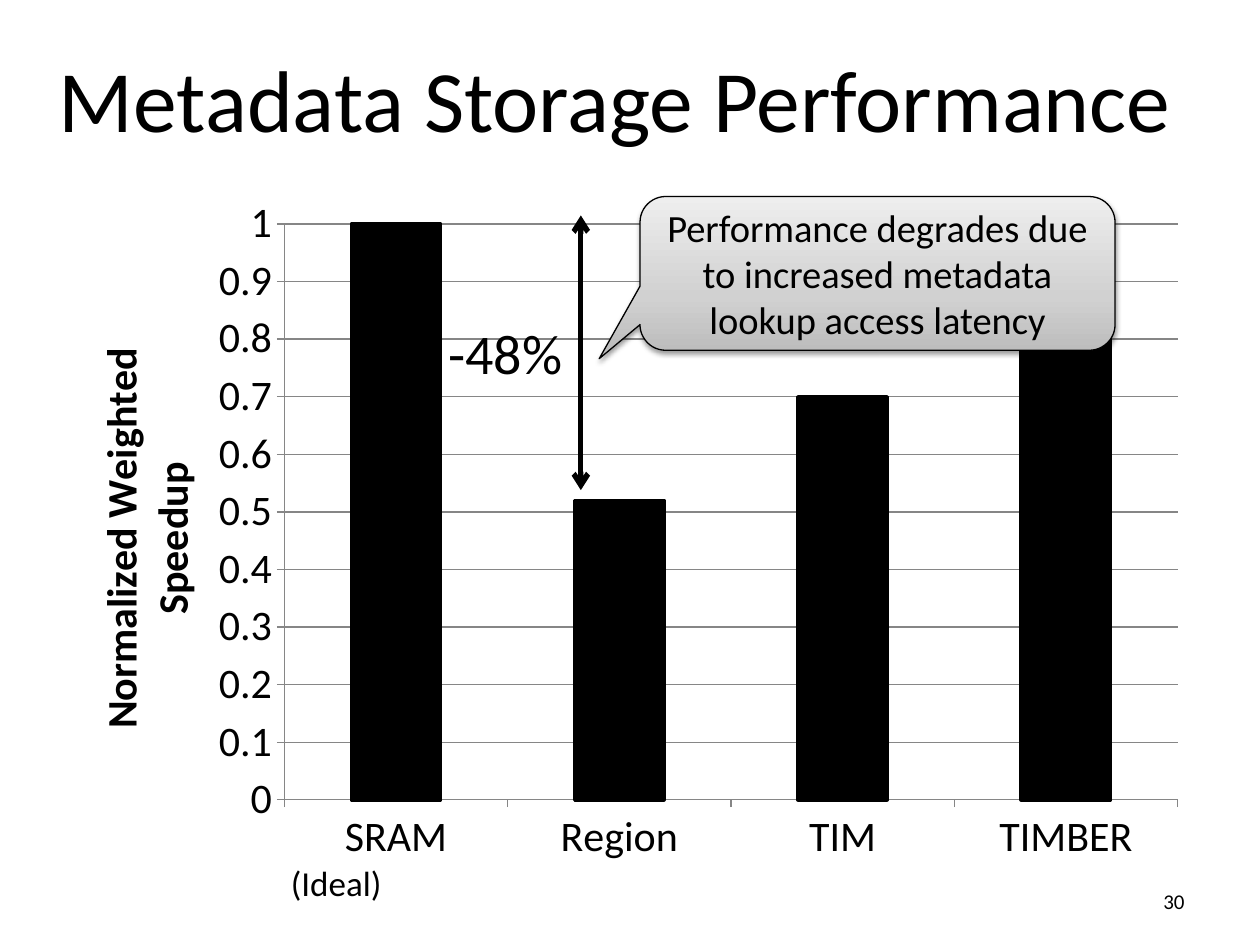
from typing import NamedTuple

from lxml import etree
from pptx import Presentation
from pptx.chart.data import CategoryChartData
from pptx.dml.color import RGBColor
from pptx.enum.chart import XL_CHART_TYPE, XL_TICK_MARK
from pptx.enum.shapes import MSO_CONNECTOR, MSO_SHAPE
from pptx.enum.text import MSO_ANCHOR, PP_ALIGN
from pptx.oxml import parse_xml
from pptx.oxml.ns import nsdecls, qn
from pptx.util import Inches, Pt

COLUMN = XL_CHART_TYPE.COLUMN_CLUSTERED
OUT, NONE = XL_TICK_MARK.OUTSIDE, XL_TICK_MARK.NONE
STRAIGHT = MSO_CONNECTOR.STRAIGHT
CALLOUT = MSO_SHAPE.ROUNDED_RECTANGULAR_CALLOUT
TOP, MIDDLE = MSO_ANCHOR.TOP, MSO_ANCHOR.MIDDLE
LEFT, CENTER, RIGHT = PP_ALIGN.LEFT, PP_ALIGN.CENTER, PP_ALIGN.RIGHT

FONT = "Calibri"
COLORS = {"ink": "000000", "grid": "868686", "dark": "BDBDBD", "mid": "D1D1D1", "light": "EEEEEE"}


class Box(NamedTuple):
    left: float
    top: float
    width: float
    height: float


class Label(NamedTuple):
    text: str
    box: Box
    size: int
    align: PP_ALIGN = LEFT
    anchor: MSO_ANCHOR = TOP
    wrap: bool = True


LABELS = [
    Label("30", Box(7.17, 6.95, 2.33, 0.4), 12, RIGHT, MIDDLE),
    Label("Metadata Storage Performance", Box(0.37, 0.46, 9.16, 0.62), 50, anchor=MIDDLE),
    Label("-48%", Box(3.46, 2.48, 1.12, 0.64), 32, wrap=False),
    Label("(Ideal)", Box(2.21, 6.79, 0.93, 0.44), 20, wrap=False),
]
NOTE = Label(
    "Performance degrades due to increased metadata lookup access latency",
    Box(5.08, 1.56, 3.77, 1.22), 22, CENTER, MIDDLE,
)
SPEEDS = {"SRAM": 1, "Region": 0.52, "TIM": 0.7, "TIMBER": 0.86}
FRAME = Box(0.37, 1.47, 9.16, 5.5)
PLOT = Box(2.26, 1.78, 7.09, 4.57)


def paint(name: str) -> RGBColor:
    return RGBColor.from_string(COLORS[name])


def apply(item, values: dict) -> None:
    for name, value in values.items():
        setattr(item, name, value)


def style(font, size: int, bold: bool = False) -> None:
    apply(font, {"name": FONT, "size": Pt(size), "bold": bold})
    font.color.rgb = paint("ink")


def stroke(line, name: str, width: float) -> None:
    line.color.rgb = paint(name)
    line.width = Pt(width)


def write(shape, label: Label) -> None:
    frame = shape.text_frame
    apply(frame, {"word_wrap": label.wrap, "vertical_anchor": label.anchor})
    line = frame.paragraphs[0]
    line.alignment = label.align
    run = line.add_run()
    run.text = label.text
    style(run.font, label.size)


def place(node, box: Box, inner: bool = False) -> None:
    parts = {
        "x": (box.left - FRAME.left) / FRAME.width,
        "y": (box.top - FRAME.top) / FRAME.height,
    }
    if inner:
        parts |= {"w": box.width / FRAME.width, "h": box.height / FRAME.height}
    target = '<c:layoutTarget val="inner"/>' if inner else ""
    modes = "".join(f'<c:{key}Mode val="edge"/>' for key in "xy")
    sizes = "".join(f'<c:{key} val="{val:.3f}"/>' for key, val in parts.items())
    for old in node.findall(qn("c:layout")):
        node.remove(old)
    layout = parse_xml(
        f'<c:layout {nsdecls("c")}><c:manualLayout>{target}{modes}{sizes}'
        "</c:manualLayout></c:layout>"
    )
    text = node.find(qn("c:tx"))
    if text is None:
        node.insert(0, layout)
    else:
        text.addnext(layout)


def draw_chart(slide) -> None:
    data = CategoryChartData()
    data.categories = list(SPEEDS)
    data.add_series("Series 1", list(SPEEDS.values()))
    chart = slide.shapes.add_chart(COLUMN, *map(Inches, FRAME), data).chart
    apply(chart, {"has_legend": False, "has_title": False})
    style(chart.font, 24)
    plot = chart.plots[0]
    apply(plot, {"gap_width": 150, "vary_by_categories": False})
    bars = plot.series[0].format
    bars.fill.solid()
    bars.fill.fore_color.rgb = paint("ink")
    stroke(bars.line, "ink", 2)
    for axis in (chart.category_axis, chart.value_axis):
        apply(axis, {"major_tick_mark": OUT, "minor_tick_mark": NONE})
        stroke(axis.format.line, "grid", 0.75)
        style(axis.tick_labels.font, 24)
    scale = chart.value_axis
    apply(scale, {"minimum_scale": 0, "maximum_scale": 1, "major_unit": 0.1,
                  "has_major_gridlines": True, "has_title": True})
    stroke(scale.major_gridlines.format.line, "grid", 0.75)
    title = scale.axis_title
    run = title.text_frame.paragraphs[0].add_run()
    run.text = "Normalized Weighted Speedup"
    style(run.font, 24, True)
    body = title.text_frame._txBody.find(qn("a:bodyPr"))
    body.set("rot", "-5400000")
    body.set("vert", "horz")
    place(title._element, Box(0.67, 2.7, 0, 0))
    place(chart._chartSpace.chart.plotArea, PLOT, True)


def draw_label(slide, label: Label) -> None:
    write(slide.shapes.add_textbox(*map(Inches, label.box)), label)


def draw_arrow(slide, x: float, top: float, bottom: float) -> None:
    arrow = slide.shapes.add_connector(STRAIGHT, *map(Inches, (x, top, x, bottom)))
    stroke(arrow.line, "ink", 3)
    line = arrow.line._get_or_add_ln()
    for end in ("headEnd", "tailEnd"):
        etree.SubElement(line, qn(f"a:{end}"), type="arrow")
    etree.SubElement(arrow._element.spPr, qn("a:effectLst"))


def draw_note(slide, label: Label) -> None:
    note = slide.shapes.add_shape(CALLOUT, *map(Inches, label.box))
    for spot, value in enumerate((-0.586, 0.555, 0.167)):
        note.adjustments[spot] = value
    stroke(note.line, "ink", 0.75)
    stops = "".join(
        f'<a:gs pos="{spot}000"><a:srgbClr val="{COLORS[name]}"/></a:gs>'
        for spot, name in ((0, "dark"), (35, "mid"), (100, "light"))
    )
    props = note._element.spPr
    props.find(qn("a:prstGeom")).addnext(parse_xml(
        f'<a:gradFill {nsdecls("a")} rotWithShape="1"><a:gsLst>{stops}</a:gsLst>'
        '<a:lin ang="16200000" scaled="1"/></a:gradFill>'
    ))
    props.append(parse_xml(
        f'<a:effectLst {nsdecls("a")}><a:outerShdw blurRad="{Pt(3.1)}" dist="{Pt(1.6)}" '
        f'dir="5400000" rotWithShape="0"><a:srgbClr val="{COLORS["ink"]}">'
        '<a:alpha val="38000"/></a:srgbClr></a:outerShdw></a:effectLst>'
    ))
    write(note, label)


def main() -> None:
    deck = Presentation()
    apply(deck, {"slide_width": Inches(10), "slide_height": Inches(7.5)})
    slide = deck.slides.add_slide(deck.slide_layouts[6])
    draw_chart(slide)
    for label in LABELS:
        draw_label(slide, label)
    draw_arrow(slide, 4.61, 1.71, 3.89)
    draw_note(slide, NOTE)
    deck.save("out.pptx")


if __name__ == "__main__":
    main()
